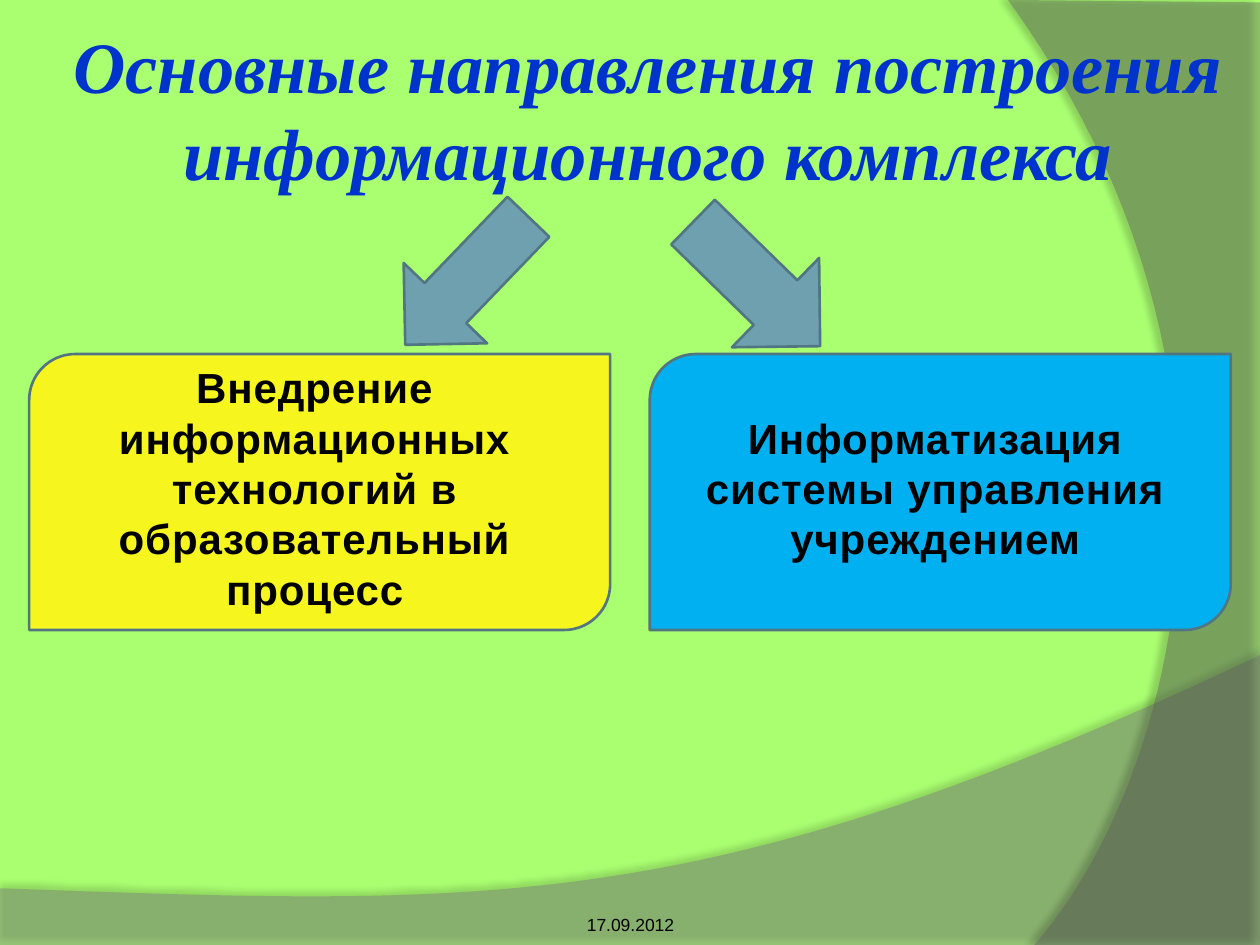
from lxml.etree import SubElement
from pptx import Presentation
from pptx.dml.color import RGBColor
from pptx.enum.shapes import MSO_SHAPE as SHAPE
from pptx.enum.text import MSO_ANCHOR as ANCHOR, MSO_AUTO_SIZE as AUTO, PP_ALIGN as ALIGN
from pptx.oxml.ns import qn
from pptx.util import Pt

LIME = RGBColor(0xAA, 0xFF, 0x71)
GREY = RGBColor(0x7F, 0x7F, 0x7F)
DARK_GREY = RGBColor(0x5E, 0x5E, 0x5E)
BLACK = RGBColor(0, 0, 0)
TITLE_BLUE = RGBColor(0x00, 0x33, 0xCC)
YELLOW = RGBColor(0xF6, 0xF6, 0x1E)
SKY = RGBColor(0x00, 0xB0, 0xF0)
STEEL = RGBColor(0x6E, 0xA0, 0xB0)
OUTLINE = RGBColor(0x51, 0x76, 0x82)

WIDTH, HEIGHT = 720, 540
CURVE_STEPS = 48


def bezier(a, b, c, d):
    """Return points along a cubic curve."""
    steps = [i / CURVE_STEPS for i in range(CURVE_STEPS + 1)]
    return [
        tuple((1 - t) ** 3 * p0 + 3 * t * (1 - t) ** 2 * p1 + 3 * t * t * (1 - t) * p2 + t ** 3 * p3
              for p0, p1, p2, p3 in zip(a, b, c, d))
        for t in steps
    ]


def set_alpha(color, percent):
    """Give a colour element its opacity."""
    SubElement(color, qn("a:alpha"), val=str(percent * 1000))


def add_wave(s, points, color, opacity, shadow):
    """Draw a translucent background wave with a soft shadow."""
    start, *rest = [(Pt(x), Pt(y)) for x, y in points]
    builder = s.shapes.build_freeform(*start, scale=1.0)
    builder.add_line_segments(rest, close=True)
    sp = builder.convert_to_shape()
    sp.fill.solid()
    sp.fill.fore_color.rgb = color
    sp.line.fill.background()
    sp.shadow.inherit = False
    set_alpha(next(sp.element.iter(qn("a:srgbClr"))), opacity)

    shadow_opacity, blur, distance, angle = shadow
    effects = next(sp.element.iter(qn("a:effectLst")))
    outer = SubElement(effects, qn("a:outerShdw"), blurRad=str(Pt(blur)), dist=str(Pt(distance)),
                       dir=str(angle * 60000), algn="ctr", rotWithShape="0")
    set_alpha(SubElement(outer, qn("a:srgbClr"), val=str(BLACK)), shadow_opacity)


def add_background(s):
    """Fill the slide and draw the two waves."""
    s.background.fill.solid()
    s.background.fill.fore_color.rgb = LIME
    bottom = bezier((WIDTH, 374.4), (402.5, 524.9), (281.5, 517.7), (0, 507.6))
    add_wave(s, [(0, HEIGHT), (WIDTH, HEIGHT), *bottom], GREY, 45, (35, 4, 3.5, 270))
    side = bezier((591.1, HEIGHT), (673.2, 445.7), (733, 216), (576, 0))
    add_wave(s, [(WIDTH, 1.4), (WIDTH, HEIGHT), *side], DARK_GREY, 40, (45, 4, 4, 180))


def format_text(shape, text, name, size, color, bold=False, anchor=ANCHOR.MIDDLE):
    """Write one centred paragraph and return it."""
    tf = shape.text_frame
    tf.word_wrap = True
    tf.auto_size = AUTO.NONE
    tf.vertical_anchor = anchor
    p = tf.paragraphs[0]
    p.text = text
    p.alignment = ALIGN.CENTER
    p.font.name, p.font.size, p.font.bold = name, Pt(size), bold
    p.font.color.rgb = color
    return p


def add_title(s, x, y, w, h, text):
    """Place the title placeholder in front of the background."""
    title = s.shapes.title
    title.element.getparent().append(title.element)
    title.left, title.top, title.width, title.height = Pt(x), Pt(y), Pt(w), Pt(h)
    p = format_text(title, text, "Times New Roman", 41.4, TITLE_BLUE, bold=True)
    p.font.italic = True
    tf = title.text_frame
    tf.margin_left = tf.margin_right = tf.margin_top = tf.margin_bottom = Pt(3.6)


def add_date(s, x, y, w, h, text):
    """Place the date at the foot of the slide."""
    box = s.shapes.add_textbox(Pt(x), Pt(y), Pt(w), Pt(h))
    format_text(box, text, "Arial", 10, BLACK, anchor=ANCHOR.BOTTOM)
    tf = box.text_frame
    tf.margin_left = tf.margin_right = tf.margin_bottom = 0


def add_block(s, kind, x, y, w, h, color):
    """Draw an outlined preset shape."""
    sp = s.shapes.add_shape(kind, Pt(x), Pt(y), Pt(w), Pt(h))
    sp.shadow.inherit = False
    sp.fill.solid()
    sp.fill.fore_color.rgb = color
    sp.line.color.rgb = OUTLINE
    sp.line.width = Pt(1.5)
    return sp


def add_card(s, x, y, w, h, color, text, text_height):
    """Draw a card with its caption."""
    add_block(s, SHAPE.ROUND_2_DIAG_RECTANGLE, x, y, w, h, color)
    top = y + (h - 5 - text_height) / 2
    box = s.shapes.add_textbox(Pt(x + 11.2), Pt(top), Pt(304), Pt(text_height))
    p = format_text(box, text, "Arial", 24, BLACK, bold=True)
    p.runs[0].font.element.set("spc", "50") if hasattr(p.runs[0].font, "element") else \
        next(box.element.iter(qn("a:rPr"), qn("a:r"))).get_or_add_rPr().set("spc", "50")


def add_arrow(s, x, y, w, h, rotation):
    """Draw a rotated block arrow."""
    add_block(s, SHAPE.LEFT_ARROW, x, y, w, h, STEEL).rotation = rotation


def main():
    """Build and save the slide."""
    prs = Presentation()
    prs.slide_width, prs.slide_height = Pt(WIDTH), Pt(HEIGHT)
    s = prs.slides.add_slide(prs.slide_layouts[5])
    add_background(s)
    add_title(s, 33.8, 16.6, 672.5, 90, "Основные направления построения информационного комплекса")
    add_date(s, 246.2, 505.4, 228.2, 28.8, "17.09.2012")

    cards = [
        (YELLOW, "Внедрение информационных технологий в образовательный процесс", 152.6),
        (SKY, "Информатизация системы управления учреждением", 94.3),
    ]
    card_width, gap = 332, 22.6
    left = (WIDTH - 2 * card_width - gap) / 2
    for i, card in enumerate(cards):
        add_card(s, left + i * (card_width + gap), 202.3, card_width, 157.7, *card)

    add_arrow(s, 216, 127.4, 101.5, 66.2, 313.9)
    add_arrow(s, 381.6, 126.7, 101.5, 71.3, 224.3)
    prs.save("out.pptx")


if __name__ == "__main__":
    main()
